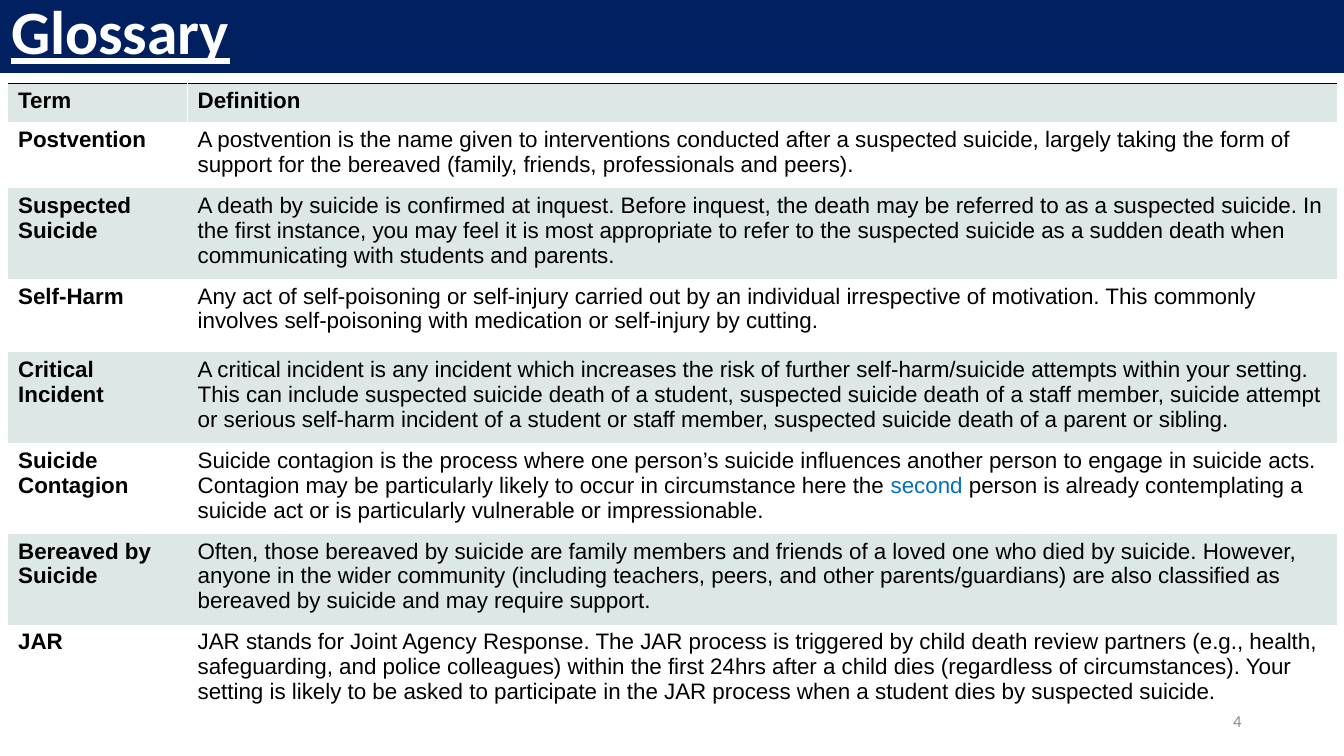
"""Build the glossary slide: a navy banner with the title above a table of terms."""
from lxml.etree import SubElement
from pptx import Presentation
from pptx.dml.color import RGBColor
from pptx.enum.shapes import MSO_SHAPE
from pptx.enum.text import MSO_ANCHOR, MSO_AUTO_SIZE, PP_ALIGN
from pptx.oxml.ns import qn
from pptx.util import Pt

NAVY = RGBColor(0x00, 0x20, 0x60)
WHITE = RGBColor(0xFF, 0xFF, 0xFF)
BLACK = RGBColor(0x00, 0x00, 0x00)
GREY = RGBColor(0x8C, 0x8C, 0x8C)
BLUE = RGBColor(0x00, 0x70, 0xC0)
PALE_GREEN = RGBColor(0xDC, 0xE7, 0xE6)
PLAIN_STYLE = "{2D5ABB26-0587-4C30-8999-92F81FD0307C}"

ENTRIES = [
    ("Term", ["Definition"], 28.08),
    ("Postvention", [
        "A postvention is the name given to interventions conducted after a suspected "
        "suicide, largely taking the form of support for the bereaved (family, friends, "
        "professionals and peers)."], 46.8),
    ("Suspected Suicide", [
        "A death by suicide is confirmed at inquest. Before inquest, the death may be "
        "referred to as a suspected suicide. In the first instance, you may feel it is most "
        "appropriate to refer to the suspected suicide as a sudden death when communicating "
        "with students and parents."], 64.8),
    ("Self-Harm", [
        "Any act of self-poisoning or self-injury carried out by an individual irrespective "
        "of motivation. This commonly involves self-poisoning with medication or self-injury "
        "by cutting."], 52.56),
    ("Critical Incident", [
        "A critical incident is any incident which increases the risk of further "
        "self-harm/suicide attempts within your setting. This can include suspected suicide "
        "death of a student, suspected suicide death of a staff member, suicide attempt or "
        "serious self-harm incident of a student or staff member, suspected suicide death of "
        "a parent or sibling."], 64.8),
    ("Suicide Contagion", [
        "Suicide contagion is the process where one person’s suicide influences another "
        "person to engage in suicide acts. Contagion may be particularly likely to occur in "
        "circumstance here the ",
        "second",
        " person is already contemplating a suicide act or is particularly vulnerable or "
        "impressionable."], 64.8),
    ("Bereaved by Suicide", [
        "Often, those bereaved by suicide are family members and friends of a loved one who "
        "died by suicide. However, anyone in the wider community (including teachers, peers, "
        "and other parents/guardians) are also classified as bereaved by suicide and may "
        "require support."], 64.8),
    ("JAR", [
        "JAR stands for Joint Agency Response. The JAR process is triggered by child death "
        "review partners (e.g., health, safeguarding, and police colleagues) within the first "
        "24hrs after a child dies (regardless of circumstances). Your setting is likely to be "
        "asked to participate in the JAR process when a student dies by suspected suicide."],
        64.8),
]


def format_font(font, name, size, color, bold=False):
    font.name = name
    font.size = Pt(size)
    font.bold = bold
    font.color.rgb = color


def add_border(cell, side, color):
    line = SubElement(cell._tc.get_or_add_tcPr(), qn(f"a:ln{side}"), w=str(Pt(1)))
    SubElement(SubElement(line, qn("a:solidFill")), qn("a:srgbClr"), val=str(color))


prs = Presentation()
prs.slide_width = Pt(960)
prs.slide_height = Pt(540)
slide = prs.slides.add_slide(prs.slide_layouts[5])

banner = slide.shapes.add_shape(MSO_SHAPE.RECTANGLE, Pt(0), Pt(-0.7), Pt(960), Pt(52.6))
banner.shadow.inherit = False
banner.fill.solid()
banner.fill.fore_color.rgb = NAVY
banner.line.color.rgb = NAVY
banner.line.width = Pt(0.75)

title = slide.shapes.title
title.left, title.top, title.width, title.height = Pt(0.7), Pt(-8.6), Pt(667.4), Pt(60.5)
title.text_frame.text = "Glossary"
title.text_frame.vertical_anchor = MSO_ANCHOR.TOP
title.text_frame.auto_size = MSO_AUTO_SIZE.SHAPE_TO_FIT_TEXT
heading = title.text_frame.paragraphs[0]
heading.alignment = PP_ALIGN.LEFT
format_font(heading.runs[0].font, "Calibri", 44, WHITE, bold=True)
heading.runs[0].font.underline = True
title.element.addprevious(banner.element)

page_number = slide.shapes.add_textbox(Pt(678), Pt(500.5), Pt(216), Pt(28.8))
page_number.text_frame.word_wrap = True
page_number.text_frame.vertical_anchor = MSO_ANCHOR.MIDDLE
page_number.text_frame.text = "4"
page_line = page_number.text_frame.paragraphs[0]
page_line.alignment = PP_ALIGN.RIGHT
format_font(page_line.runs[0].font, "Calibri", 12, GREY)

table_height = sum(height for _, _, height in ENTRIES)
glossary_frame = slide.shapes.add_table(
    len(ENTRIES), 2, Pt(5.8), Pt(59.5), Pt(949), Pt(table_height))
glossary = glossary_frame.table
glossary.horz_banding = False
next(glossary_frame.element.iter(qn("a:tableStyleId"))).text = PLAIN_STYLE
glossary.columns[0].width = Pt(128.2)
glossary.columns[1].width = Pt(820.8)

for row, (term, definition, height) in enumerate(ENTRIES):
    glossary.rows[row].height = Pt(height)
    for column, pieces in enumerate([[term], definition]):
        cell = glossary.cell(row, column)
        cell.text_frame.text = pieces[0]
        paragraph = cell.text_frame.paragraphs[0]
        for piece in pieces[1:]:
            paragraph.add_run().text = piece
        for run in paragraph.runs:
            color = BLUE if run.text == "second" else BLACK
            format_font(run.font, "Arial", 16, color, bold=row == 0 or column == 0)
        if row == 0:
            add_border(cell, "R" if column == 0 else "L", WHITE)
            add_border(cell, "T", BLACK)
            add_border(cell, "B", WHITE)
        if row % 2 == 0:
            cell.fill.solid()
            cell.fill.fore_color.rgb = PALE_GREEN
        else:
            cell.fill.background()

prs.save("out.pptx")
